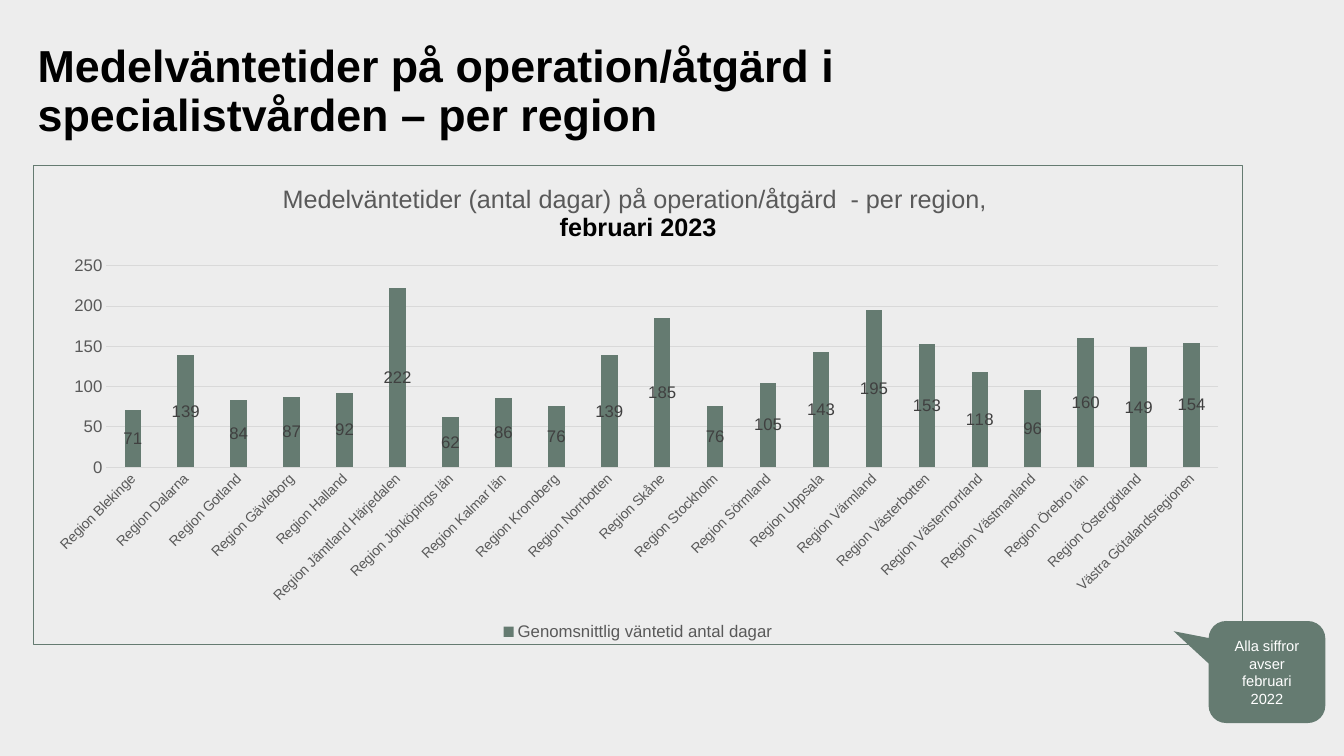
from lxml import etree
from pptx import Presentation
from pptx import util as u
from pptx.chart.data import CategoryChartData
from pptx.dml.color import RGBColor
from pptx.enum import chart as charts, shapes, text
from pptx.oxml import parse_xml
from pptx.oxml.ns import nsdecls, qn

COLORS = {
    "page": "EDEDED", "green": "657B71", "grid": "D9D9D9", "axis": "595959",
    "label": "404040", "black": "000000", "white": "FFFFFF",
}
FONT = "Arial"
SERIES_NAME = "Genomsnittlig väntetid antal dagar"
WAITING_DAYS = {
    "Region Blekinge": 71, "Region Dalarna": 139, "Region Gotland": 84,
    "Region Gävleborg": 87, "Region Halland": 92,
    "Region Jämtland Härjedalen": 222, "Region Jönköpings län": 62,
    "Region Kalmar län": 86, "Region Kronoberg": 76, "Region Norrbotten": 139,
    "Region Skåne": 185, "Region Stockholm": 76, "Region Sörmland": 105,
    "Region Uppsala": 143, "Region Värmland": 195, "Region Västerbotten": 153,
    "Region Västernorrland": 118, "Region Västmanland": 96,
    "Region Örebro län": 160, "Region Östergötland": 149,
    "Västra Götalandsregionen": 154,
}


def rgb(name):
    return RGBColor.from_string(COLORS[name])


def format_font(font, size, color, bold=False):
    font.name, font.size, font.bold = FONT, u.Pt(size), bold
    font.color.rgb = rgb(color)


def format_line(line, color):
    line.color.rgb = rgb(color)
    line.width = u.Pt(0.75)


def write(frame, *lines, size, color, bold=False, align=None, spacing=None):
    """Fill a text frame with one paragraph for each line."""
    frame.word_wrap = True
    for index, line in enumerate(lines):
        para = frame.add_paragraph() if index else frame.paragraphs[0]
        para.alignment, para.line_spacing = align, spacing
        span = para.add_run()
        span.text = line
        format_font(span.font, size, color, bold)


def add_heading(page, left, top, width, height):
    box = page.shapes.add_textbox(left, top, width, height)
    frame = box.text_frame
    frame.margin_left = frame.margin_right = 0
    frame.margin_top = frame.margin_bottom = 0
    frame.vertical_anchor = text.MSO_ANCHOR.BOTTOM
    write(frame, "Medelväntetider på operation/åtgärd i specialistvården – per region",
          size=32, color="black", bold=True, spacing=0.9)


def frame_chart(chart):
    """Give the chart area a thin border and no fill."""
    border = parse_xml(
        f'<c:spPr {nsdecls("c", "a")}><a:noFill/><a:ln w="9525"><a:solidFill>'
        f'<a:srgbClr val="{COLORS["green"]}"/></a:solidFill></a:ln></c:spPr>')
    chart.element.find(qn("c:chart")).addnext(border)


def place_plot(chart, **shares):
    """Fix the inner plot area as shares of the chart area."""
    plot_area = chart.element.find(".//" + qn("c:plotArea"))
    layout = plot_area.find(qn("c:layout"))
    if layout is None:
        layout = etree.Element(qn("c:layout"))
        plot_area.insert(0, layout)
    manual = etree.SubElement(layout, qn("c:manualLayout"))
    settings = {"layoutTarget": "inner", "xMode": "edge", "yMode": "edge", **shares}
    for tag, value in settings.items():
        etree.SubElement(manual, qn("c:" + tag)).set("val", str(value))


def format_axes(chart):
    regions, days = chart.category_axis, chart.value_axis
    for axis, size in ((regions, 10), (days, 12)):
        axis.major_tick_mark = axis.minor_tick_mark = charts.XL_TICK_MARK.NONE
        format_font(axis.tick_labels.font, size, "axis")
    format_line(regions.format.line, "grid")
    slant = regions._element.find(qn("c:txPr")).find(qn("a:bodyPr"))
    slant.set("rot", "-2700000")
    slant.set("vert", "horz")
    days.minimum_scale, days.maximum_scale, days.major_unit = 0, 250, 50
    days.format.line.fill.background()
    format_line(days.major_gridlines.format.line, "grid")


def add_waiting_chart(page, left, top, width, height):
    chart_data = CategoryChartData(number_format="0")
    chart_data.categories = list(WAITING_DAYS)
    chart_data.add_series(SERIES_NAME, list(WAITING_DAYS.values()))
    chart = page.shapes.add_chart(charts.XL_CHART_TYPE.COLUMN_CLUSTERED,
                                  left, top, width, height, chart_data).chart
    format_font(chart.font, 12, "black")
    frame_chart(chart)
    place_plot(chart, x=0.06, y=0.21, w=0.92, h=0.42)
    format_axes(chart)

    title = chart.chart_title.text_frame
    write(title, "Medelväntetider (antal dagar) på operation/åtgärd  - per region, ",
          "februari 2023", size=18, color="axis")
    format_font(title.paragraphs[1].runs[0].font, 18, "black", bold=True)

    chart.has_legend = True
    chart.legend.position = charts.XL_LEGEND_POSITION.BOTTOM
    chart.legend.include_in_layout = False
    format_font(chart.legend.font, 12, "axis")

    plot = chart.plots[0]
    plot.gap_width, plot.overlap, plot.vary_by_categories = 219, -27, False
    series = plot.series[0]
    series.format.fill.solid()
    series.format.fill.fore_color.rgb = rgb("green")
    labels = series.data_labels
    labels.show_value = True
    labels.position = charts.XL_LABEL_POSITION.CENTER
    format_font(labels.font, 12, "label")


def add_callout(page, left, top, width, height):
    callout = page.shapes.add_shape(shapes.MSO_SHAPE.ROUNDED_RECTANGULAR_CALLOUT,
                                    left, top, width, height)
    for index, value in enumerate((-0.8, -0.4, 0.17)):
        callout.adjustments[index] = value
    callout.shadow.inherit = False
    callout.fill.solid()
    callout.fill.fore_color.rgb = rgb("green")
    callout.line.fill.background()
    callout.text_frame.vertical_anchor = text.MSO_ANCHOR.MIDDLE
    write(callout.text_frame, "Alla siffror avser", "februari", "2022",
          size=10.5, color="white", align=text.PP_ALIGN.CENTER)


def main():
    deck = Presentation()
    deck.slide_width, deck.slide_height = u.Cm(33.87), u.Cm(19.05)
    page = deck.slides.add_slide(deck.slide_layouts[6])
    page.background.fill.solid()
    page.background.fill.fore_color.rgb = rgb("page")
    add_waiting_chart(page, u.Cm(0.84), u.Cm(4.15), u.Cm(30.48), u.Cm(12.11))
    add_heading(page, u.Cm(0.95), u.Cm(0.48), u.Cm(27.65), u.Cm(3.07))
    add_callout(page, u.Cm(30.46), u.Cm(15.65), u.Cm(2.94), u.Cm(2.57))
    deck.save("out.pptx")


if __name__ == "__main__":
    main()
